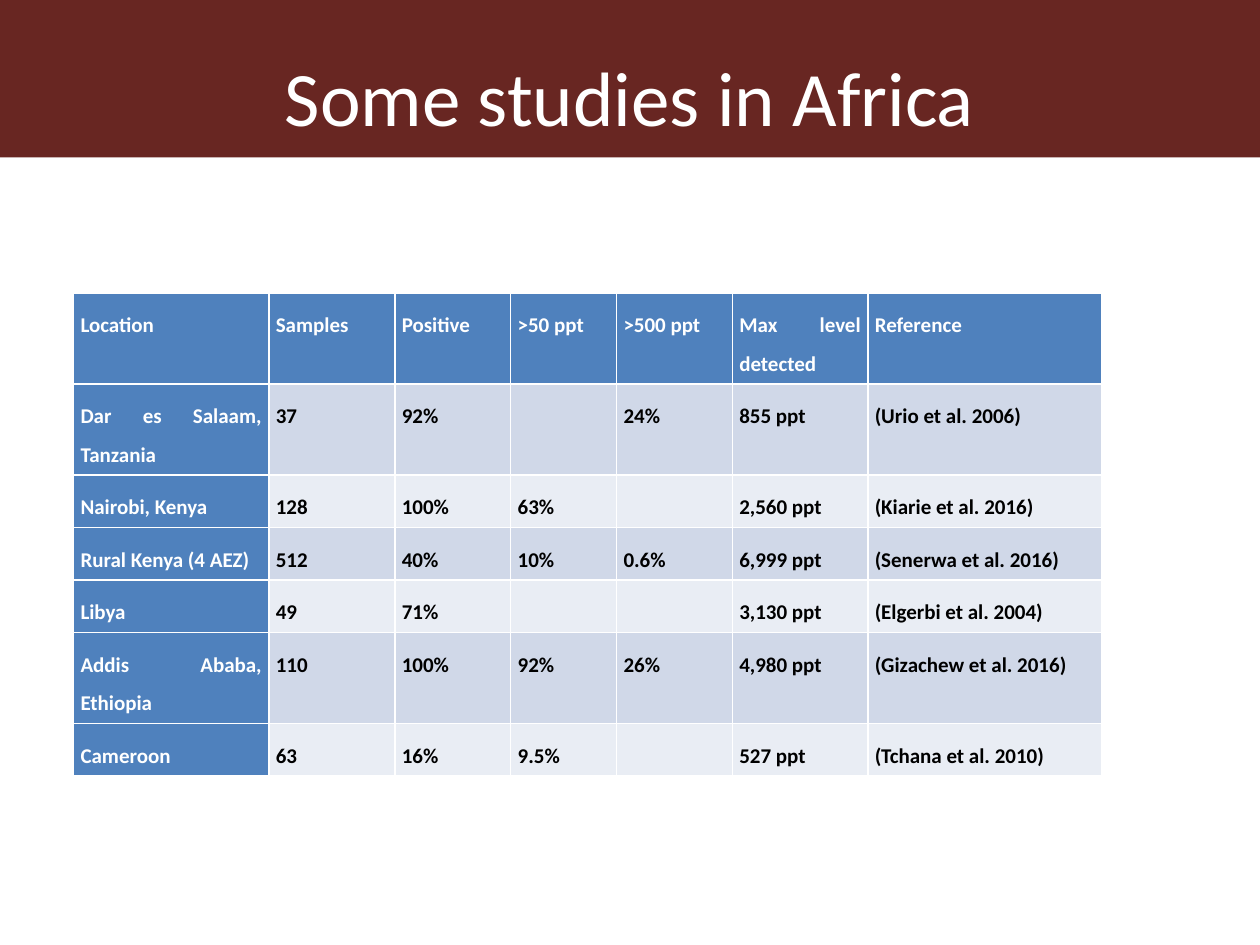
from pptx import Presentation
from pptx.dml.color import RGBColor
from pptx.enum import shapes, text
from pptx.util import Pt

MAROON = RGBColor(0x68, 0x26, 0x22)
BLUE = RGBColor(0x4F, 0x81, 0xBD)
BANDS = RGBColor(0xE9, 0xED, 0xF4), RGBColor(0xD0, 0xD8, 0xE8)
WHITE = RGBColor(0xFF, 0xFF, 0xFF)
BLACK = RGBColor(0, 0, 0)


def put(obj, props):
    for key, val in props.items():
        setattr(obj, key, val)


deck = Presentation()
put(deck, {"slide_width": Pt(720), "slide_height": Pt(540)})
slide = deck.slides.add_slide(deck.slide_layouts[5])

band = slide.shapes.add_shape(shapes.MSO_SHAPE.RECTANGLE, 0, 0, Pt(720), Pt(90))
band.shadow.inherit = False
band.fill.solid()
band.fill.fore_color.rgb = MAROON
band.line.fill.background()
slide.shapes._spTree.insert(2, band._element)

title = slide.shapes.title
put(title, {"left": Pt(36), "top": Pt(21.6), "width": Pt(648), "height": Pt(90)})
put(title.text_frame, {"text": "Some studies in Africa", "margin_top": Pt(6.5),
                       "vertical_anchor": text.MSO_ANCHOR.TOP})
para = title.text_frame.paragraphs[0]
para.alignment = text.PP_ALIGN.CENTER
font = para.runs[0].font
put(font, {"name": "Calibri", "size": Pt(44)})
font.color.rgb = WHITE

rows = [
    ("Location", "Samples", "Positive", ">50 ppt", ">500 ppt",
     "Max level detected", "Reference"),
    ("Dar es Salaam, Tanzania", "37", "92%", "", "24%", "855 ppt", "(Urio et al. 2006)"),
    ("Nairobi, Kenya", "128", "100%", "63%", "", "2,560 ppt", "(Kiarie et al. 2016)"),
    ("Rural Kenya (4 AEZ)", "512", "40%", "10%", "0.6%", "6,999 ppt",
     "(Senerwa et al. 2016)"),
    ("Libya", "49", "71%", "", "", "3,130 ppt", "(Elgerbi et al. 2004)"),
    ("Addis Ababa, Ethiopia", "110", "100%", "92%", "26%", "4,980 ppt",
     "(Gizachew et al. 2016)"),
    ("Cameroon", "63", "16%", "9.5%", "", "527 ppt", "(Tchana et al. 2010)"),
]
widths = [111.6, 72, 66.2, 60.5, 66.2, 77.4, 133.9]
highs = [51, 52, 30, 30, 30, 52, 30]

grid = slide.shapes.add_table(len(rows), len(widths), Pt(42), Pt(167.5),
                              Pt(sum(widths)), Pt(sum(highs))).table
grid.first_col = True
for col, width in zip(grid.columns, widths):
    col.width = Pt(width)
for line, high in zip(grid.rows, highs):
    line.height = Pt(high)

sides = ("left", "right", "top", "bottom")
inset = {f"margin_{side}": Pt(4) for side in sides}
flow = {"alignment": text.PP_ALIGN.JUSTIFY, "line_spacing": 1.5, "space_after": Pt(8)}
style = {"name": "Calibri", "size": Pt(12), "bold": True}
for r, row in enumerate(rows):
    for c, word in enumerate(row):
        head = r == 0 or c == 0
        cell = grid.cell(r, c)
        put(cell, inset)
        cell.fill.solid()
        cell.fill.fore_color.rgb = BLUE if head else BANDS[r % 2]
        para = cell.text_frame.paragraphs[0]
        run = para.add_run()
        run.text = word
        put(run.font, style)
        run.font.color.rgb = WHITE if head else BLACK
        if word:
            put(para, flow)

deck.save("out.pptx")
